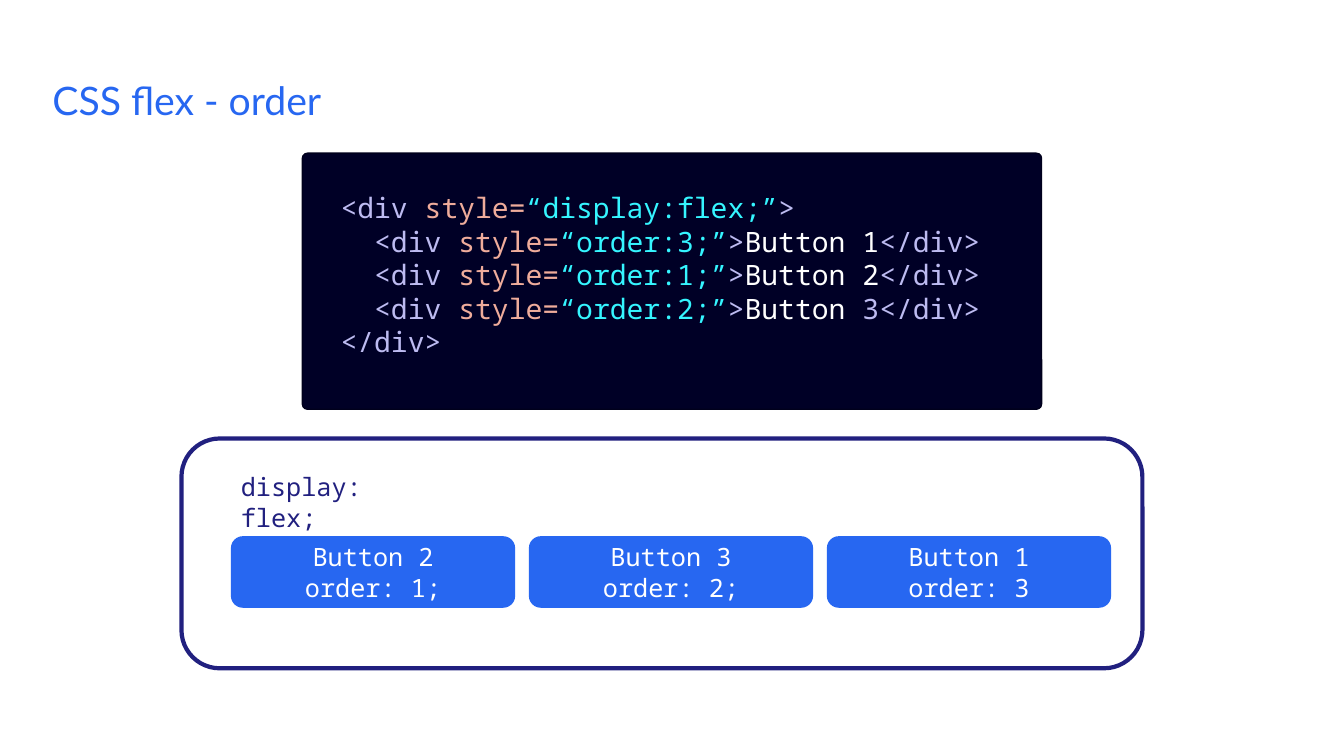
import pptx
import pptx.util
import pptx.dml.color
import pptx.enum.shapes
import pptx.enum.text

ALIGN = pptx.enum.text.PP_ALIGN
ANCHOR = pptx.enum.text.MSO_ANCHOR
FIT = pptx.enum.text.MSO_AUTO_SIZE
ROUND = pptx.enum.shapes.MSO_SHAPE.ROUNDED_RECTANGLE

WIDE = pptx.util.Inches(13.33)
HIGH = pptx.util.Inches(7.5)

THEME = {
    "blue": "2767F1", "navy": "21207F", "panel": "000026", "edge": "00001C",
    "tag": "BDBBF1", "key": "EFAC9B", "value": "35F5FF", "plain": "FFFFFF",
    "head": {"name": "Lato", "size": pptx.util.Pt(28)},
    "code": {"name": "Noto Sans Mono", "size": pptx.util.Pt(20)},
    "label": {"name": "Noto Sans Mono", "size": pptx.util.Pt(18)},
}


def color(name):
    return pptx.dml.color.RGBColor.from_string(THEME[name])


def apply(item, values):
    for name, value in values.items():
        setattr(item, name, value)


def area(left, top, width, height):
    return [round(WIDE * left / 100), round(HIGH * top / 100),
            round(WIDE * width / 100), round(HIGH * height / 100)]


def write(shape, lines, font, frame=None, para=None):
    body = shape.text_frame
    apply(body, {"word_wrap": True, **(frame or {})})
    for index, line in enumerate(lines):
        item = body.add_paragraph() if index else body.paragraphs[0]
        apply(item, para or {})
        for tint, text in line:
            run = item.add_run()
            run.text = text
            apply(run.font, THEME[font])
            run.font.color.rgb = color(tint)


def add_title(slide, place, text):
    title = slide.shapes.title
    apply(title, dict(zip(("left", "top", "width", "height"), area(*place))))
    frame = {"margin_left": 0, "margin_top": 0, "margin_right": 0,
             "margin_bottom": 0, "auto_size": FIT.NONE,
             "vertical_anchor": ANCHOR.MIDDLE}
    write(title, [[("blue", text)]], "head", frame,
          {"alignment": ALIGN.LEFT, "line_spacing": 0.9})


def add_text(slide, place, lines, font):
    box = slide.shapes.add_textbox(*area(*place))
    write(box, lines, font, {"auto_size": FIT.NONE})


def add_card(slide, place, fill=None, line=None, weight=1, bend=None):
    card = slide.shapes.add_shape(ROUND, *area(*place))
    card.shadow.inherit = False
    if bend is not None:
        card.adjustments[0] = bend
    if fill:
        card.fill.solid()
        card.fill.fore_color.rgb = color(fill)
    else:
        card.fill.background()
    if line:
        card.line.color.rgb = color(line)
        card.line.width = pptx.util.Pt(weight)
    else:
        card.line.fill.background()
    return card


def open_tag(style):
    return [("tag", "<div "), ("key", "style="), ("value", f"“{style};”"),
            ("tag", ">")]


def child(order, label, tail):
    return [("plain", "  "), *open_tag(f"order:{order}"),
            ("plain", label), ("tag", f"{tail}</div>")]


def add_code(slide):
    add_card(slide, (22.5, 20.27, 55, 33.87), "panel", "edge", 1, 0.02)
    lines = [
        open_tag("display:flex"),
        child(3, "Button 1", ""),
        child(1, "Button 2", ""),
        child(2, "Button ", "3"),
        [("tag", "</div>")],
    ]
    add_text(slide, (24.6, 24.53, 52, 23.73), lines, "code")


def add_flex(slide):
    left, step = 17.18, 22.17
    add_card(slide, (13.5, 58, 71.5, 30.4), line="navy", weight=3)
    add_text(slide, (left, 61.73, 16.05, 5.33),
             [[("navy", "display: flex;")]], "label")
    items = [("Button 2", "order: 1;"), ("Button 3", "order: 2;"),
             ("Button 1", "order: 3")]
    for index, texts in enumerate(items):
        button = add_card(slide, (left + index * step, 70.93, 21.15, 9.47),
                          "blue")
        write(button, [[("plain", text)] for text in texts], "label",
              {"vertical_anchor": ANCHOR.MIDDLE}, {"alignment": ALIGN.CENTER})


def main():
    deck = pptx.Presentation()
    apply(deck, {"slide_width": WIDE, "slide_height": HIGH})
    slide = deck.slides.add_slide(deck.slide_layouts[5])
    add_title(slide, (3.9, 10.67, 53.79, 5.73), "CSS flex - order")
    add_code(slide)
    add_flex(slide)
    deck.save("out.pptx")


if __name__ == "__main__":
    main()
